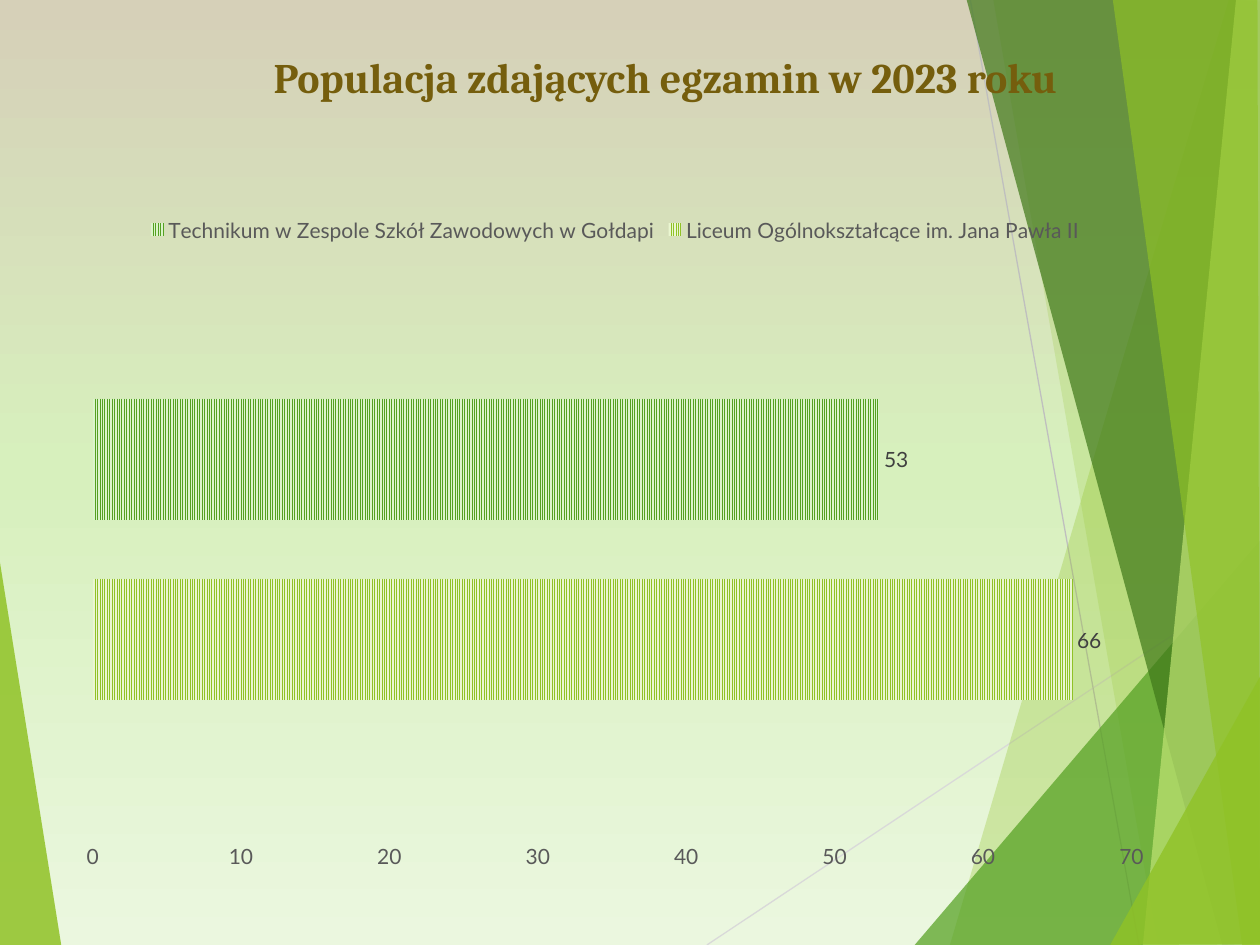
from copy import deepcopy

from pptx import Presentation
from pptx.chart.data import CategoryChartData
from pptx.dml.color import RGBColor
from pptx.enum.chart import XL_CHART_TYPE, XL_LABEL_POSITION, XL_LEGEND_POSITION, XL_TICK_MARK
from pptx.enum.dml import MSO_PATTERN
from pptx.enum.shapes import MSO_CONNECTOR
from pptx.enum.text import MSO_ANCHOR, PP_ALIGN
from pptx.oxml.ns import qn
from pptx.util import Cm, Pt

BAR = XL_CHART_TYPE.BAR_CLUSTERED
OUT_END = XL_LABEL_POSITION.OUTSIDE_END
LEGEND_TOP = XL_LEGEND_POSITION.TOP
NO_TICK = XL_TICK_MARK.NONE
STRIPES = MSO_PATTERN.NARROW_VERTICAL
STRAIGHT = MSO_CONNECTOR.STRAIGHT
TOP = MSO_ANCHOR.TOP
CENTER = PP_ALIGN.CENTER

WIDE, HIGH = 25.4, 19.05
EDGE = 25.43
LEFT = ("90C226", 85, [(-0.03, 11.15), (1.24, 19.08), (-0.03, HIGH)])
LINES = [
    ("D9D9D9", (14.25, HIGH), (EDGE, 11.61)),
    ("BFBFBF", (19.56, 0), (22.96, HIGH)),
]
RIGHT = [
    ("90C226", 30, [(24.77, 0), (19.15, HIGH), (EDGE, 19.08), (EDGE, 0.03)]),
    ("90C226", 20, [(20.02, -0.03), (23.34, HIGH), (EDGE, HIGH), (EDGE, -0.03)]),
    ("54A021", 72, [(18.44, HIGH), (WIDE, 10.9), (EDGE, HIGH)]),
    ("3F7819", 70, [(19.48, -0.03), (24.64, HIGH), (EDGE, 19.02), (EDGE, -0.03)]),
    ("C0E474", 70, [(24.92, -0.03), (23.04, HIGH), (EDGE, HIGH), (WIDE, -0.03)]),
    ("90C226", 65, [(22.43, -0.03), (25.04, HIGH), (WIDE, HIGH), (25.35, -0.03)]),
    ("90C226", 80, [(22.38, HIGH), (EDGE, 13.59), (EDGE, 19.03)]),
]
SCHOOLS = [
    ("Liceum Ogólnokształcące im. Jana Pawła II", 66, "90C226", "EAF6D1"),
    ("Technikum w Zespole Szkół Zawodowych w Gołdapi", 53, "54A021", "DBF4CA"),
]


def paint(color, tint):
    """Set a colour from a hex string."""
    color.rgb = RGBColor.from_string(tint)


def style(font, name, size, tint, bold=False):
    """Set the face, size, colour and weight of a font."""
    font.name, font.size, font.bold = name, Pt(size), bold
    paint(font.color, tint)


def add_back(slide, tints):
    """Fill the background with an even vertical gradient."""
    fill = slide.background.fill
    fill.gradient()
    fill.gradient_angle = 270
    stops = slide.element.find(".//" + qn("a:gsLst"))
    stops.append(deepcopy(stops[-1]))
    for i, (stop, tint) in enumerate(zip(fill.gradient_stops, tints)):
        stop.position = i / (len(tints) - 1)
        paint(stop.color, tint)


def add_facet(slide, tint, alpha, points):
    """Draw a see-through polygon."""
    start, *rest = [(Cm(x), Cm(y)) for x, y in points]
    pen = slide.shapes.build_freeform(*start)
    pen.add_line_segments(rest)
    shape = pen.convert_to_shape()
    shape.shadow.inherit = False
    shape.line.fill.background()
    shape.fill.solid()
    paint(shape.fill.fore_color, tint)
    color = shape.element.spPr.find(".//" + qn("a:srgbClr"))
    color.makeelement(qn("a:alpha"))
    color.append(color.makeelement(qn("a:alpha"), {"val": str(alpha * 1000)}))


def add_line(slide, tint, start, end):
    """Draw a thin straight line."""
    line = slide.shapes.add_connector(STRAIGHT, *[Cm(v) for v in start + end])
    line.line.width = Pt(0.75)
    paint(line.line.color, tint)
    props = line.element.spPr
    props.append(props.makeelement(qn("a:effectLst")))


def set_title(slide, text):
    """Place the title in front of the facets."""
    title = slide.shapes.title
    title.left, title.top, title.width, title.height = Cm(1.98), Cm(0.91), Cm(22.86), Cm(3.18)
    title.text_frame.text = text
    title.text_frame.vertical_anchor = TOP
    para = title.text_frame.paragraphs[0]
    para.alignment = CENTER
    style(para.font, "Cambria", 24, "755E0D", True)
    title.element.getparent().append(title.element)


def set_axes(chart):
    """Hide the category axis and leave only numbers on the value axis."""
    chart.category_axis.visible = False
    axis = chart.value_axis
    axis.has_major_gridlines = False
    axis.major_tick_mark = axis.minor_tick_mark = NO_TICK
    axis.minimum_scale, axis.maximum_scale, axis.major_unit = 0, 70, 10
    axis.format.line.fill.background()
    axis.tick_labels.number_format = "0"
    axis.tick_labels.number_format_is_linked = False
    style(axis.tick_labels.font, "Lato", 12, "595959")


def style_bar(bar, front, back):
    """Give a series striped bars and value labels."""
    bar.invert_if_negative = False
    fill = bar.format.fill
    fill.patterned()
    fill.pattern = STRIPES
    paint(fill.fore_color, front)
    paint(fill.back_color, back)
    labels = bar.data_labels
    labels.show_value = True
    labels.position = OUT_END
    labels.number_format = "0"
    labels.number_format_is_linked = False
    style(labels.font, "Lato", 12, "404040")


def add_bars(slide):
    """Add the bar chart of both schools."""
    data = CategoryChartData(number_format="0")
    data.categories = ["1"]
    for name, count, *_ in SCHOOLS:
        data.add_series(name, [count])
    frame = slide.shapes.add_chart(BAR, Cm(1.3), Cm(4.09), Cm(22.2), Cm(13.69), data)
    chart = frame.chart
    style(chart.font, "Lato", 10, "000000")
    chart.has_title = False
    chart.has_legend = True
    chart.legend.position = LEGEND_TOP
    chart.legend.include_in_layout = False
    style(chart.legend.font, "Lato", 12, "595959")
    set_axes(chart)
    plot = chart.plots[0]
    plot.vary_by_categories = False
    plot.gap_width, plot.overlap = 227, -48
    for bar, (_, _, front, back) in zip(plot.series, SCHOOLS):
        style_bar(bar, front, back)


def main():
    """Build and save the slide."""
    deck = Presentation()
    deck.slide_width, deck.slide_height = Cm(WIDE), Cm(HIGH)
    slide = deck.slides.add_slide(deck.slide_layouts[5])
    add_back(slide, ["D6D0B8", "D7F0BD", "EBF7DF"])
    add_facet(slide, *LEFT)
    for line in LINES:
        add_line(slide, *line)
    for facet in RIGHT:
        add_facet(slide, *facet)
    set_title(slide, "Populacja zdających egzamin w 2023 roku")
    add_bars(slide)
    deck.save("out.pptx")


if __name__ == "__main__":
    main()
